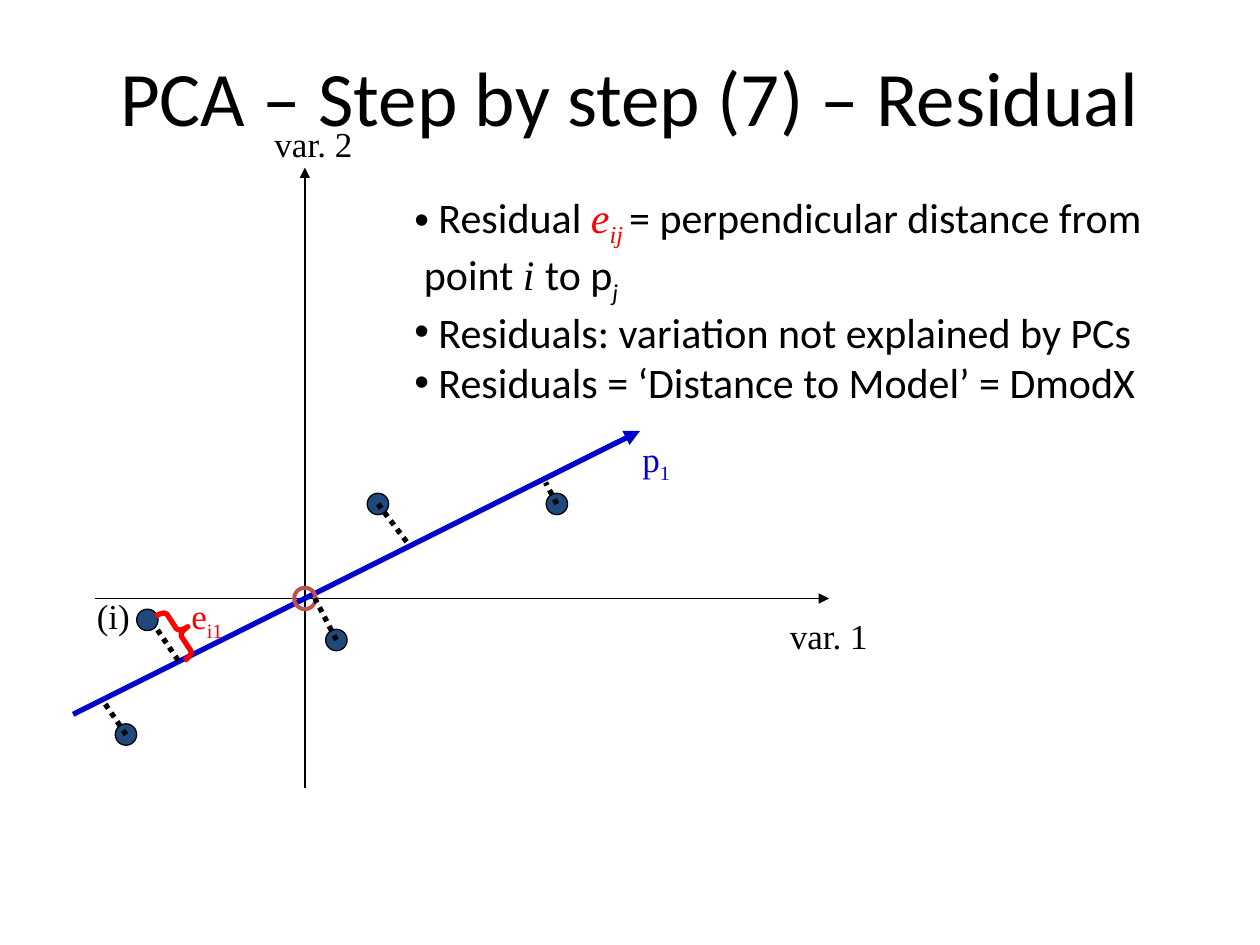
from dataclasses import dataclass

from lxml import etree
from pptx import Presentation
from pptx.dml.color import RGBColor
from pptx.enum.dml import MSO_LINE
from pptx.enum.shapes import MSO_CONNECTOR, MSO_SHAPE
from pptx.enum.text import MSO_ANCHOR, MSO_AUTO_SIZE, PP_ALIGN
from pptx.oxml.ns import qn
from pptx.util import Inches, Pt

ELLIPSE, BRACE = MSO_SHAPE.OVAL, MSO_SHAPE.RIGHT_BRACE
STRAIGHT = MSO_CONNECTOR.STRAIGHT
DOTTED = MSO_LINE.ROUND_DOT
TOP, CENTER = MSO_ANCHOR.TOP, PP_ALIGN.CENTER
NO_AUTOFIT = MSO_AUTO_SIZE.NONE


@dataclass(frozen=True)
class Theme:
    black: str = "000000"
    red: str = "FF0000"
    blue: str = "0000CC"
    point: str = "1F497D"
    origin: str = "C0504D"
    sans: str = "Calibri"
    serif: str = "Times New Roman"
    title_size: float = 44
    body_size: float = 24
    label_size: float = 20
    thin: float = 0.75
    medium: float = 2.25
    thick: float = 3


THEME = Theme()


@dataclass(frozen=True)
class Run:
    text: str
    font: str = THEME.sans
    color: str = THEME.black
    italic: bool = False
    subscript: bool = False


@dataclass(frozen=True)
class Label:
    left: float
    top: float
    width: float
    runs: tuple[Run, ...]


@dataclass(frozen=True)
class Line:
    start: tuple[float, float]
    end: tuple[float, float]
    color: str = THEME.black
    width: float = THEME.thick
    arrow: bool = False
    dotted: bool = False


def serif(text: str, color: str = THEME.black, **styles: bool) -> Run:
    return Run(text, THEME.serif, color, **styles)


BULLETS = (
    (
        Run(" Residual "),
        serif("e", THEME.red, italic=True),
        serif("ij ", THEME.red, italic=True, subscript=True),
        Run("= perpendicular distance from\v point "),
        serif("i ", italic=True),
        Run("to p"),
        Run("j", italic=True, subscript=True),
    ),
    (Run(" Residuals: variation not explained by PCs"),),
    (Run(" Residuals = ‘Distance to Model’ = DmodX"),),
)
LABELS = (
    Label(6.17, 4.83, 0.88, (serif("var. 1"),)),
    Label(2.08, 0.92, 0.88, (serif("var. 2"),)),
    Label(0.67, 4.67, 0.46, (serif("(i)"),)),
    Label(5, 3.42, 0.45,
          (serif("p", THEME.blue), serif("1", THEME.blue, subscript=True))),
    Label(1.42, 4.67, 0.47,
          (serif("e", THEME.red), serif("i1", THEME.red, subscript=True))),
)
AXES = (
    Line((2.42, 6.25), (2.42, 1.33), width=THEME.thin, arrow=True),
    Line((0.75, 4.75), (6.58, 4.75), width=THEME.thin, arrow=True),
    Line((0.58, 5.67), (5.08, 3.42), color=THEME.blue, arrow=True),
)
RESIDUALS = (
    Line((1.25, 5), (1.42, 5.25), dotted=True),
    Line((1, 5.83), (0.83, 5.58), dotted=True),
    Line((2.67, 5.08), (2.5, 4.75), dotted=True),
    Line((3, 4), (3.25, 4.33), dotted=True),
    Line((4.42, 4), (4.33, 3.83), dotted=True),
)
ORIGIN = (2.42, 4.75)
POINTS = ((3, 4), (4.42, 4), (2.67, 5.08), (1.17, 4.92), (1, 5.83))
DIAMETER = 0.17


def set_attributes(target, **values) -> None:
    for name, value in values.items():
        setattr(target, name, value)


def add_runs(paragraph, runs: tuple[Run, ...], size: float) -> None:
    for item in runs:
        # A vertical tab marks a line break inside the paragraph.
        for index, text in enumerate(item.text.split("\v")):
            if index:
                paragraph.add_line_break()
            run = paragraph.add_run()
            run.text = text
            set_attributes(run.font, name=item.font, size=Pt(size), italic=item.italic)
            run.font.color.rgb = RGBColor.from_string(item.color)
            if item.subscript:
                run.font._element.set("baseline", "-25000")


def add_bullets(slide) -> None:
    box = slide.shapes.add_textbox(Inches(3.19), Inches(1.47), Inches(6.61), Inches(1.7))
    frame = box.text_frame
    frame.word_wrap = True
    for index, runs in enumerate(BULLETS):
        paragraph = frame.add_paragraph() if index else frame.paragraphs[0]
        properties = paragraph._p.get_or_add_pPr()
        etree.SubElement(properties, qn("a:buFont"), typeface="Arial")
        etree.SubElement(properties, qn("a:buChar"), char="•")
        add_runs(paragraph, runs, THEME.body_size)


def add_label(slide, label: Label) -> None:
    box = slide.shapes.add_textbox(
        Inches(label.left), Inches(label.top), Inches(label.width), Inches(0.43))
    box.text_frame.word_wrap = False
    add_runs(box.text_frame.paragraphs[0], label.runs, THEME.label_size)


def add_line(slide, line: Line) -> None:
    connector = slide.shapes.add_connector(
        STRAIGHT, *(Inches(value) for value in line.start + line.end))
    connector.line.color.rgb = RGBColor.from_string(line.color)
    connector.line.width = Pt(line.width)
    if line.dotted:
        connector.line.dash_style = DOTTED
    if line.arrow:
        etree.SubElement(connector.line._get_or_add_ln(), qn("a:tailEnd"), type="triangle")
    etree.SubElement(connector._element.spPr, qn("a:effectLst"))


def add_outline(slide, kind, center: tuple[float, float], width: float, height: float,
                color: str, weight: float, fill: str = ""):
    """Add an outlined preset shape around its centre; it is hollow without a fill."""
    shape = slide.shapes.add_shape(
        kind, Inches(center[0] - width / 2), Inches(center[1] - height / 2),
        Inches(width), Inches(height))
    shape.shadow.inherit = False
    shape.line.color.rgb = RGBColor.from_string(color)
    shape.line.width = Pt(weight)
    if fill:
        shape.fill.solid()
        shape.fill.fore_color.rgb = RGBColor.from_string(fill)
    else:
        shape.fill.background()
    return shape


def add_title(slide) -> None:
    title = slide.shapes.title
    set_attributes(title, left=Inches(0.5), top=Inches(0.3),
                   width=Inches(9), height=Inches(1.25))
    set_attributes(title.text_frame, vertical_anchor=TOP, margin_top=Inches(0.09),
                   auto_size=NO_AUTOFIT, word_wrap=True)
    paragraph = title.text_frame.paragraphs[0]
    paragraph.alignment = CENTER
    add_runs(paragraph, (Run("PCA – Step by step (7) – Residual"),), THEME.title_size)


def main() -> None:
    presentation = Presentation()
    set_attributes(presentation, slide_width=Inches(10), slide_height=Inches(7.5))
    slide = presentation.slides.add_slide(presentation.slide_layouts[5])
    add_title(slide)
    add_bullets(slide)
    for line in AXES:
        add_line(slide, line)
    for center in POINTS:
        add_outline(slide, ELLIPSE, center, DIAMETER, DIAMETER,
                    THEME.black, THEME.thin, THEME.point)
    add_outline(slide, ELLIPSE, ORIGIN, DIAMETER, DIAMETER, THEME.origin, THEME.medium)
    for line in RESIDUALS:
        add_line(slide, line)
    brace = add_outline(slide, BRACE, (1.42, 5.02), 0.17, 0.42, THEME.red, THEME.thick)
    brace.rotation = 326.9
    brace.adjustments[0] = 0.21
    for label in LABELS:
        add_label(slide, label)
    presentation.save("out.pptx")


if __name__ == "__main__":
    main()
